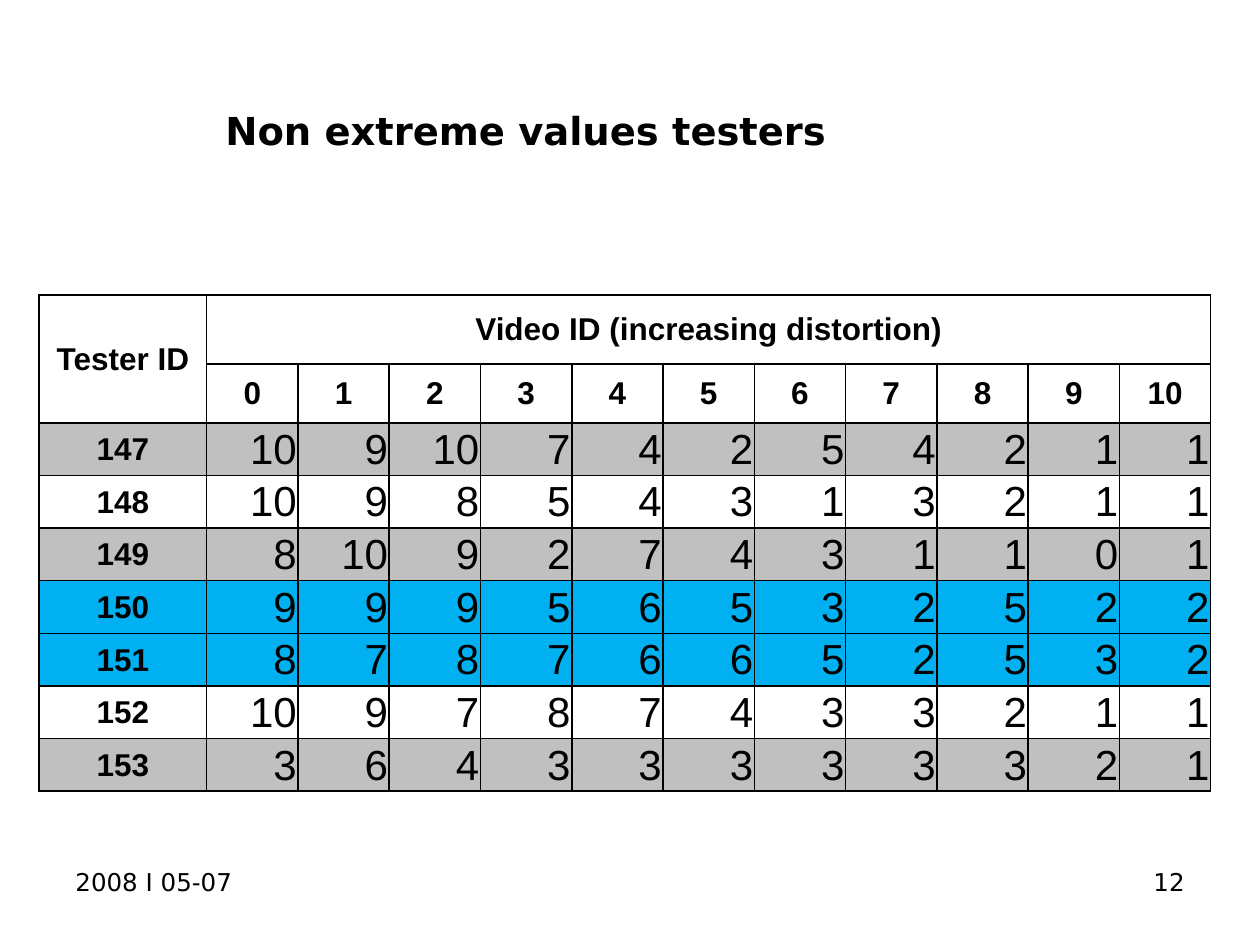
from pptx import Presentation
from pptx.dml.color import RGBColor
from pptx.enum.text import MSO_ANCHOR, PP_ALIGN
from pptx.oxml.ns import qn
from pptx.util import Pt
from lxml.etree import SubElement

BLACK = RGBColor(0x00, 0x00, 0x00)
GREY = RGBColor(0xC0, 0xC0, 0xC0)
BLUE = RGBColor(0x00, 0xB0, 0xF0)

TEXTS = [
    ("Non extreme values testers", (121.68, 37.44, 562.32, 74.16), 22, True, PP_ALIGN.LEFT, MSO_ANCHOR.MIDDLE),
    ("2008 I 05-07", (36, 491.76, 168, 37.44), 14, False, PP_ALIGN.LEFT, MSO_ANCHOR.TOP),
    ("12", (516, 491.76, 168, 37.44), 14, False, PP_ALIGN.RIGHT, MSO_ANCHOR.TOP),
]

TESTER_HEADING = "Tester ID"
VIDEO_HEADING = "Video ID (increasing distortion)"
VIDEOS = list(range(11))
TESTERS = [
    (147, GREY, [10, 9, 10, 7, 4, 2, 5, 4, 2, 1, 1]),
    (148, None, [10, 9, 8, 5, 4, 3, 1, 3, 2, 1, 1]),
    (149, GREY, [8, 10, 9, 2, 7, 4, 3, 1, 1, 0, 1]),
    (150, BLUE, [9, 9, 9, 5, 6, 5, 3, 2, 5, 2, 2]),
    (151, BLUE, [8, 7, 8, 7, 6, 6, 5, 2, 5, 3, 2]),
    (152, None, [10, 9, 7, 8, 7, 4, 3, 3, 2, 1, 1]),
    (153, GREY, [3, 6, 4, 3, 3, 3, 3, 3, 3, 2, 1]),
]

TABLE_LEFT, TABLE_TOP = 22.4, 168.6
COLUMN_WIDTHS = [95.7] + [52.16] * len(VIDEOS)
ROW_HEIGHTS = [39.3, 33.7] + [30.1] * len(TESTERS)
HEADER_ROWS = 2
THIN, THICK = 1, 1.5


def style_paragraph(paragraph, font_name, size, bold, alignment):
    paragraph.alignment = alignment
    for run in paragraph.runs:
        run.font.name = font_name
        run.font.size = Pt(size)
        run.font.bold = bold
        run.font.color.rgb = BLACK


def add_text(slide, text, box, size, bold, alignment, anchor):
    text_frame = slide.shapes.add_textbox(*map(Pt, box)).text_frame
    text_frame.word_wrap = True
    text_frame.vertical_anchor = anchor
    text_frame.text = text
    style_paragraph(text_frame.paragraphs[0], "DejaVu Sans", size, bold, alignment)


def set_borders(cell, top, bottom):
    properties = cell._tc.get_or_add_tcPr()
    for side, width in (("L", THIN), ("R", THIN), ("T", top), ("B", bottom)):
        line = SubElement(properties, qn(f"a:ln{side}"), w=str(Pt(width)))
        fill = SubElement(line, qn("a:solidFill"))
        SubElement(fill, qn("a:srgbClr"), val=str(BLACK))


def format_cell(cell, text, color, is_score, top, bottom):
    cell.margin_left = cell.margin_right = cell.margin_top = Pt(0.72)
    cell.margin_bottom = 0
    cell.vertical_anchor = MSO_ANCHOR.MIDDLE
    set_borders(cell, top, bottom)
    if color is None:
        cell.fill.background()
    else:
        cell.fill.solid()
        cell.fill.fore_color.rgb = color
    cell.text_frame.text = text
    alignment = PP_ALIGN.RIGHT if is_score else PP_ALIGN.CENTER
    style_paragraph(cell.text_frame.paragraphs[0], "Arial", 24 if is_score else 18, not is_score, alignment)


def add_score_table(slide):
    rows = [
        (None, [TESTER_HEADING, VIDEO_HEADING] + [""] * (len(VIDEOS) - 1)),
        (None, [""] + VIDEOS),
    ] + [(color, [tester] + scores) for tester, color, scores in TESTERS]
    frame = slide.shapes.add_table(
        len(rows), len(COLUMN_WIDTHS), Pt(TABLE_LEFT), Pt(TABLE_TOP),
        Pt(sum(COLUMN_WIDTHS)), Pt(sum(ROW_HEIGHTS)))
    table = frame.table
    table.first_row = table.horz_banding = False
    for column, width in zip(table.columns, COLUMN_WIDTHS):
        column.width = Pt(width)
    for row, height in zip(table.rows, ROW_HEIGHTS):
        row.height = Pt(height)
    for row_index, (color, values) in enumerate(rows):
        top = THICK if 0 < row_index <= HEADER_ROWS else THIN
        bottom = THICK if row_index < HEADER_ROWS else THIN
        for column_index, value in enumerate(values):
            is_score = row_index >= HEADER_ROWS and column_index > 0
            format_cell(table.cell(row_index, column_index), str(value), color, is_score, top, bottom)
    table.cell(0, 0).merge(table.cell(1, 0))
    table.cell(0, 1).merge(table.cell(0, len(VIDEOS)))


def main():
    presentation = Presentation()
    presentation.slide_width = Pt(720)
    presentation.slide_height = Pt(540)
    slide = presentation.slides.add_slide(presentation.slide_layouts[6])
    for entry in TEXTS:
        add_text(slide, *entry)
    add_score_table(slide)
    presentation.save("out.pptx")


if __name__ == "__main__":
    main()
